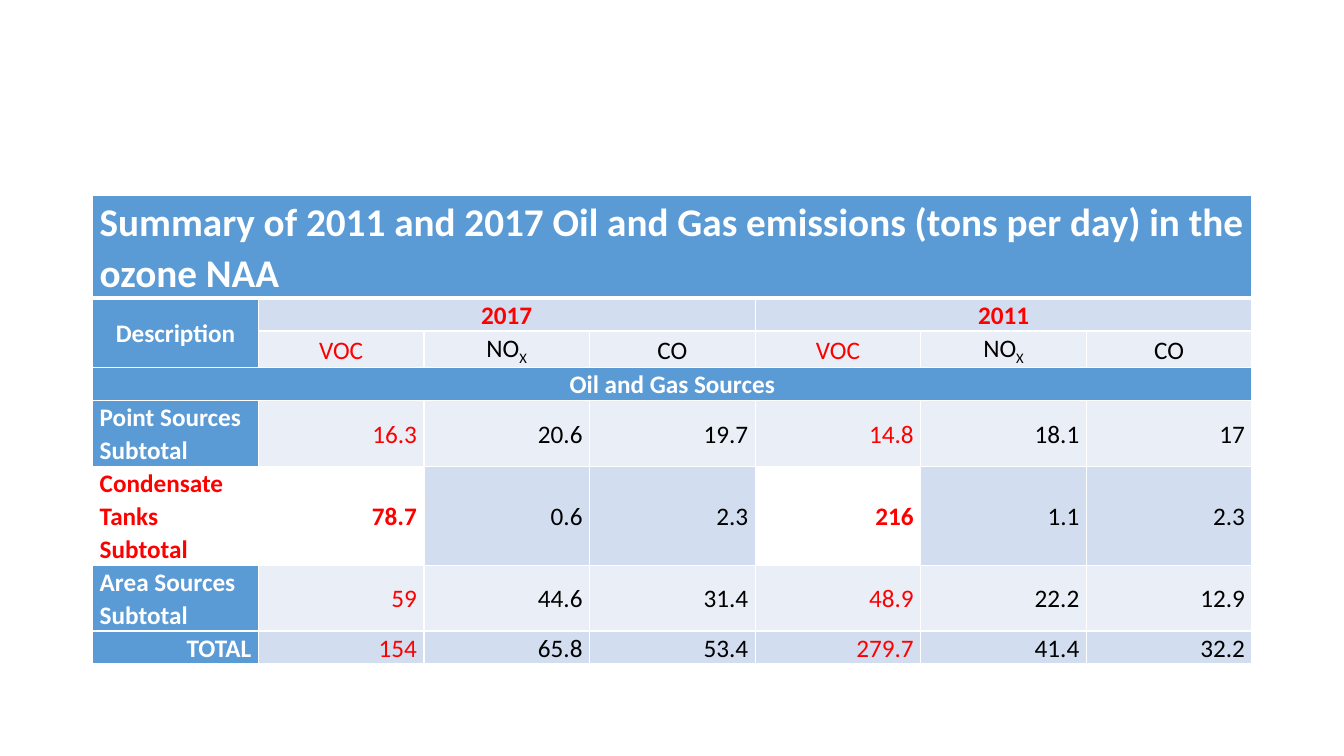
import pptx
import pptx.dml.color
import pptx.enum.text
import pptx.util
from lxml import etree

Pt = pptx.util.Pt
ALIGN = pptx.enum.text.PP_ALIGN
THEME = {
    "font": "Calibri", "title_size": 28, "body_size": 18,
    "accent": "5B9BD5", "dark_band": "D2DEEF", "light_band": "EAEFF7",
    "white": "FFFFFF", "black": "000000", "red": "FF0000",
}
ROWS = [
    ["Summary of 2011 and 2017 Oil and Gas emissions (tons per day) in the ozone NAA"] + [""] * 6,
    ["Description", "2017", "", "", "2011", "", ""],
    ["", "VOC", "NO_X", "CO", "VOC", "NO_X", "CO"],
    ["Oil and Gas Sources"] + [""] * 6,
    ["Point Sources Subtotal", "16.3", "20.6", "19.7", "14.8", "18.1", "17"],
    ["Condensate Tanks Subtotal", "78.7", "0.6", "2.3", "216", "1.1", "2.3"],
    ["Area Sources Subtotal", "59", "44.6", "31.4", "48.9", "22.2", "12.9"],
    ["TOTAL", "154", "65.8", "53.4", "279.7", "41.4", "32.2"],
]
HEIGHTS = [73, 23.5, 25.5, 23.5, 47, 70.5, 47, 23.5]
COLUMN_WIDTH = 118.29
TITLE, YEARS, POLLUTANTS, SECTION, CONDENSATE, TOTAL = 0, 1, 2, 3, 5, 7
VOC_COLUMNS = (1, 4)
MERGES = [((0, 0), (0, 6)), ((1, 0), (2, 0)), ((1, 1), (1, 3)),
          ((1, 4), (1, 6)), ((3, 0), (3, 6))]


def color(name):
    return pptx.dml.color.RGBColor.from_string(THEME[name])


def add_borders(cell, row):
    """Draw white cell edges, with a heavier rule between title and body."""
    properties = cell._tc.get_or_add_tcPr()
    namespace = "{http://schemas.openxmlformats.org/drawingml/2006/main}"
    for side in "LRTB":
        heavy = (row, side) in ((TITLE, "B"), (YEARS, "T"))
        line = etree.SubElement(properties, namespace + "ln" + side,
                                w=str(Pt(3 if heavy else 1)))
        fill = etree.SubElement(line, namespace + "solidFill")
        etree.SubElement(fill, namespace + "srgbClr", val=THEME["white"])


deck = pptx.Presentation()
deck.slide_width, deck.slide_height = Pt(960), Pt(540)
page = deck.slides.add_slide(deck.slide_layouts[6])
table = page.shapes.add_table(
    len(ROWS), 7, Pt(66.24), Pt(139.7), Pt(COLUMN_WIDTH * 7), Pt(sum(HEIGHTS))).table
for column in table.columns:
    column.width = Pt(COLUMN_WIDTH)
for table_row, height in zip(table.rows, HEIGHTS):
    table_row.height = Pt(height)
for first, last in MERGES:
    table.cell(*first).merge(table.cell(*last))

for row, texts in enumerate(ROWS):
    for col, text in enumerate(texts):
        cell = table.cell(row, col)
        is_label = col == 0 or row in (TITLE, SECTION)
        highlighted = row == CONDENSATE and (col == 0 or col in VOC_COLUMNS)
        is_red = highlighted or row == YEARS and col > 0 or col in VOC_COLUMNS
        cell_format = {
            "margin_left": Pt(5), "margin_right": Pt(5), "margin_top": Pt(0),
            "margin_bottom": Pt(0), "vertical_anchor": pptx.enum.text.MSO_ANCHOR.MIDDLE,
        }
        for name, value in cell_format.items():
            setattr(cell, name, value)
        add_borders(cell, row)
        if highlighted:
            cell.fill.background()
        else:
            cell.fill.solid()
            band = "dark_band" if row % 2 else "light_band"
            cell.fill.fore_color.rgb = color("accent" if is_label else band)
        if not text:
            continue

        para = cell.text_frame.paragraphs[0]
        para.line_spacing = 1.07
        if row in (YEARS, POLLUTANTS, SECTION):
            para.alignment = ALIGN.CENTER
        elif col > 0 or row == TOTAL:
            para.alignment = ALIGN.RIGHT
        else:
            para.alignment = ALIGN.LEFT
        font_format = {
            "name": THEME["font"],
            "size": Pt(THEME["title_size" if row == TITLE else "body_size"]),
            "bold": is_label or highlighted or row == YEARS,
        }
        for position, part in enumerate(text.split("_")):
            span = para.add_run()
            span.text = part
            for name, value in font_format.items():
                setattr(span.font, name, value)
            span.font.color.rgb = color("red" if is_red else "white" if is_label else "black")
            if position:
                span._r.get_or_add_rPr().set("baseline", "-25000")

deck.save("out.pptx")
